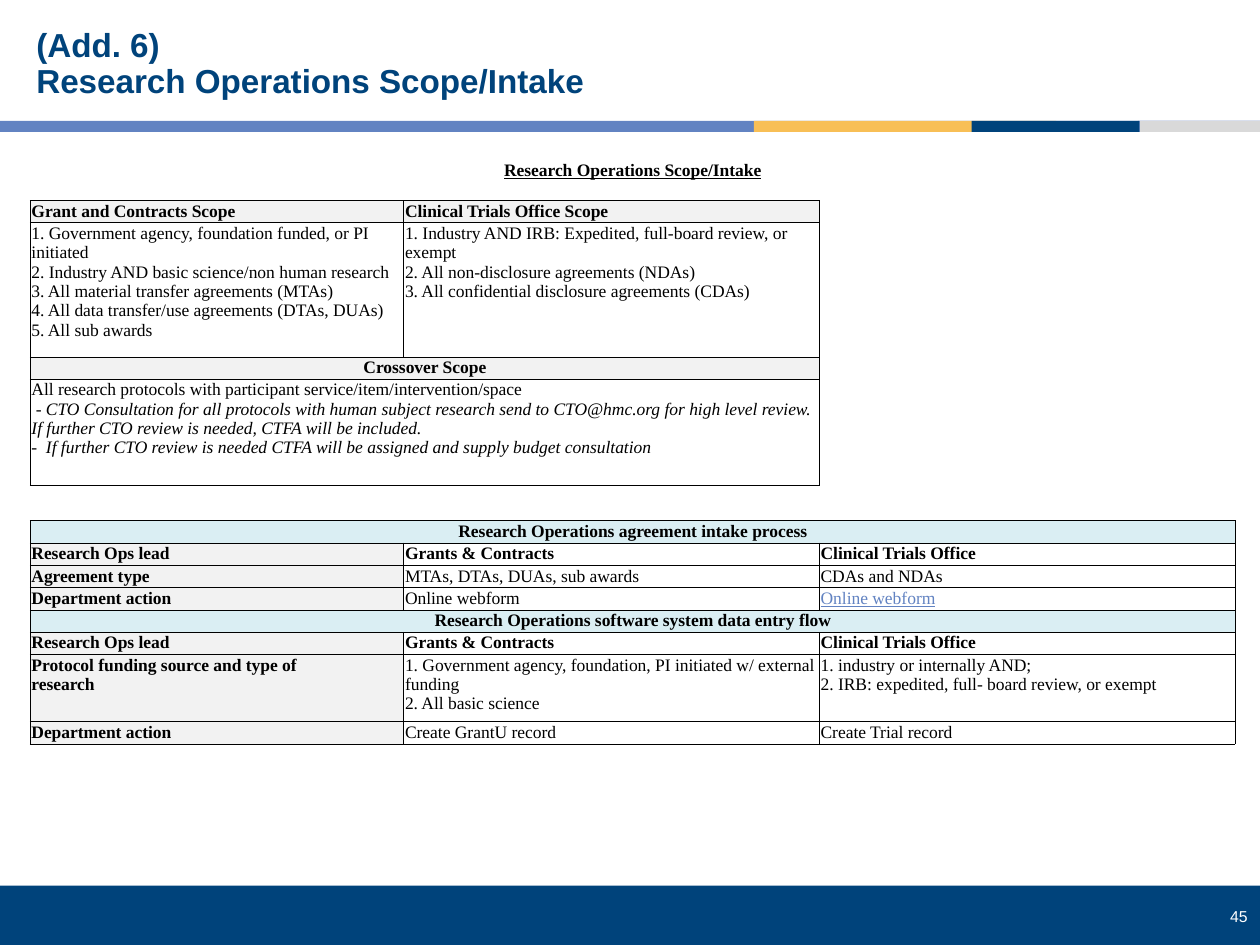
from dataclasses import dataclass

from lxml import etree
from pptx import Presentation
from pptx import util as u
from pptx.dml import color
from pptx.enum import shapes, text
from pptx.oxml import ns

Pt = u.Pt


@dataclass(frozen=True)
class Theme:
    navy: str = "00437B"
    blue: str = "6283C2"
    amber: str = "F8BF56"
    silver: str = "D9D9D9"
    label: str = "F2F2F2"
    band: str = "DAEEF3"
    ink: str = "000000"
    white: str = "FFFFFF"
    sans: str = "Arial"
    serif: str = "Times New Roman"
    title_size: float = 19
    body_size: float = 10
    number_size: float = 9
    spacer_size: float = 7
    rule: float = 0.5


THEME = Theme()
LEFT, CENTER, RIGHT = text.PP_ALIGN.LEFT, text.PP_ALIGN.CENTER, text.PP_ALIGN.RIGHT
NO_GRID_STYLE = "{2D5ABB26-0587-4C30-8999-92F81FD0307C}"

COLUMNS = (213.5, 237.5, 237.5)
ROWS = (12.8, 10.3, 12.8, 76.6, 12.7, 10.2, 10.2, 10.2, 30, 10.2, 10.2,
        12.8, 12.7, 12.7, 12.8, 12.7, 12.7, 38.2, 12.9)

SCOPE_HEADINGS = ("Grant and Contracts Scope", "Clinical Trials Office Scope")
SCOPES = (
    "1. Government agency, foundation funded, or PI initiated\n"
    "2. Industry AND basic science/non human research\n"
    "3. All material transfer agreements (MTAs)\n"
    "4. All data transfer/use agreements (DTAs, DUAs)\n"
    "5. All sub awards",
    "1. Industry AND IRB: Expedited, full-board review, or exempt\n"
    "2. All non-disclosure agreements (NDAs)\n"
    "3. All confidential disclosure agreements (CDAs)",
)
CROSSOVER = "All research protocols with participant service/item/intervention/space"
CROSSOVER_NOTES = (
    " - CTO Consultation for all protocols with human subject research send to "
    "CTO@hmc.org for high level review. If further CTO review is needed, CTFA will be included.\n"
    "-  If further CTO review is needed CTFA will be assigned and supply budget consultation"
)
LEADS = ("Research Ops lead", "Grants & Contracts", "Clinical Trials Office")
PROCESSES = {
    11: ("Research Operations agreement intake process", (
        LEADS,
        ("Agreement type", "MTAs, DTAs, DUAs, sub awards", "CDAs and NDAs"),
        ("Department action", "Online webform", "Online webform"),
    )),
    15: ("Research Operations software system data entry flow", (
        LEADS,
        ("Protocol funding source and type of\nresearch",
         "1. Government agency, foundation, PI initiated w/ external funding\n2. All basic science",
         "1. industry or internally AND;\n2. IRB: expedited, full- board review, or exempt"),
        ("Department action", "Create GrantU record", "Create Trial record"),
    )),
}
LINK_CELL = (14, 2)


def rgb(value):
    return color.RGBColor.from_string(value)


def write(frame, content, size=THEME.body_size, font=THEME.serif, ink=THEME.ink,
          bold=False, italic=False, underline=False, align=LEFT, spacing=None):
    for line in content.split("\n"):
        paragraph = frame.paragraphs[-1]
        if paragraph.runs:
            paragraph = frame.add_paragraph()
        paragraph.alignment = align
        if spacing:
            paragraph.line_spacing = spacing
        run = paragraph.add_run()
        run.text = line
        run.font.size, run.font.name = Pt(size), font
        run.font.bold, run.font.italic, run.font.underline = bold, italic, underline
        run.font.color.rgb = rgb(ink)


def text_box(slide, box, content, anchor, **style):
    frame = slide.shapes.add_textbox(*map(Pt, box)).text_frame
    frame.word_wrap = True
    frame.vertical_anchor = anchor
    write(frame, content, font=THEME.sans, **style)


def bar(slide, box, fill):
    shape = slide.shapes.add_shape(shapes.MSO_SHAPE.RECTANGLE, *map(Pt, box))
    shape.shadow.inherit = False
    shape.fill.solid()
    shape.fill.fore_color.rgb = rgb(fill)
    shape.line.fill.background()


def header(slide, box):
    left, top, width, height = box
    text_box(slide, (left + 13.7, top + 12.2, 689, 49.7),
             "(Add. 6)\nResearch Operations Scope/Intake", text.MSO_ANCHOR.MIDDLE,
             size=THEME.title_size, ink=THEME.navy, bold=True, spacing=0.9)
    stripe = 6.2
    for start, length, fill in (
        (0, width, THEME.blue),
        (430.8, 172.8, THEME.amber),
        (650.2, 69.8, THEME.blue),
        (555.3, 95.8, THEME.navy),
        (651.4, 68.6, THEME.silver),
    ):
        bar(slide, (left + start, top + height - stripe, length, stripe), fill)


def footer(slide, box):
    left, top, width, height = box
    bar(slide, box, THEME.navy)
    text_box(slide, (left + width - 49.7, top + 8.8, 49.7, 18), "45", text.MSO_ANCHOR.TOP,
             size=THEME.number_size, ink=THEME.white, align=RIGHT)


def is_boxed(row, column):
    return row >= 11 or (2 <= row <= 8 and column < 2)


def prepare_cell(cell, boxed):
    cell.margin_left = cell.margin_right = cell.margin_top = Pt(0.7)
    cell.margin_bottom = 0
    properties = cell._tc.get_or_add_tcPr()
    for side in ("lnL", "lnR", "lnT", "lnB") if boxed else ():
        line = etree.SubElement(properties, ns.qn(f"a:{side}"), w=str(Pt(THEME.rule)))
        fill = etree.SubElement(line, ns.qn("a:solidFill"))
        etree.SubElement(fill, ns.qn("a:srgbClr"), val=THEME.ink)
    cell.fill.background()
    end = etree.SubElement(cell.text_frame.paragraphs[0]._p, ns.qn("a:endParaRPr"))
    end.set("sz", str(int(THEME.spacer_size * 100)))


def fill_cell(cell, content, fill=None, **style):
    if fill:
        cell.fill.solid()
        cell.fill.fore_color.rgb = rgb(fill)
    write(cell.text_frame, content, **style)


def scope_section(table):
    table.cell(0, 0).merge(table.cell(0, 2))
    fill_cell(table.cell(0, 0), "Research Operations Scope/Intake",
              bold=True, underline=True, align=CENTER)
    for column, (heading, scope) in enumerate(zip(SCOPE_HEADINGS, SCOPES)):
        fill_cell(table.cell(2, column), heading, THEME.label, bold=True)
        fill_cell(table.cell(3, column), scope)
    table.cell(4, 0).merge(table.cell(4, 1))
    fill_cell(table.cell(4, 0), "Crossover Scope", THEME.label, bold=True, align=CENTER)
    crossover = table.cell(5, 0)
    crossover.merge(table.cell(8, 1))
    fill_cell(crossover, CROSSOVER)
    fill_cell(crossover, CROSSOVER_NOTES, italic=True)


def process_section(table, first, heading, entries):
    table.cell(first, 0).merge(table.cell(first, 2))
    fill_cell(table.cell(first, 0), heading, THEME.band, bold=True, align=CENTER)
    for row, entry in enumerate(entries, first + 1):
        for column, content in enumerate(entry):
            linked = (row, column) == LINK_CELL
            fill_cell(table.cell(row, column), content,
                      THEME.label if column == 0 else None,
                      bold=column == 0 or entry is LEADS,
                      ink=THEME.blue if linked else THEME.ink, underline=linked)


def intake_table(slide, box):
    table = slide.shapes.add_table(len(ROWS), len(COLUMNS), *map(Pt, box)).table
    table.first_row = table.horz_banding = False
    table._tbl.tblPr.find(ns.qn("a:tableStyleId")).text = NO_GRID_STYLE
    for column, width in zip(table.columns, COLUMNS):
        column.width = Pt(width)
    for row_index, height in enumerate(ROWS):
        table.rows[row_index].height = Pt(height)
        for column_index in range(len(COLUMNS)):
            prepare_cell(table.cell(row_index, column_index), is_boxed(row_index, column_index))
    scope_section(table)
    for first, (heading, entries) in PROCESSES.items():
        process_section(table, first, heading, entries)


def main():
    deck = Presentation()
    deck.slide_width, deck.slide_height = Pt(720), Pt(540)
    slide = deck.slides.add_slide(deck.slide_layouts[6])
    footer(slide, (0, 506, 720, 34))
    header(slide, (0, 0, 720, 75.3))
    intake_table(slide, (17.3, 91.5, sum(COLUMNS), sum(ROWS)))
    deck.save("out.pptx")


if __name__ == "__main__":
    main()
